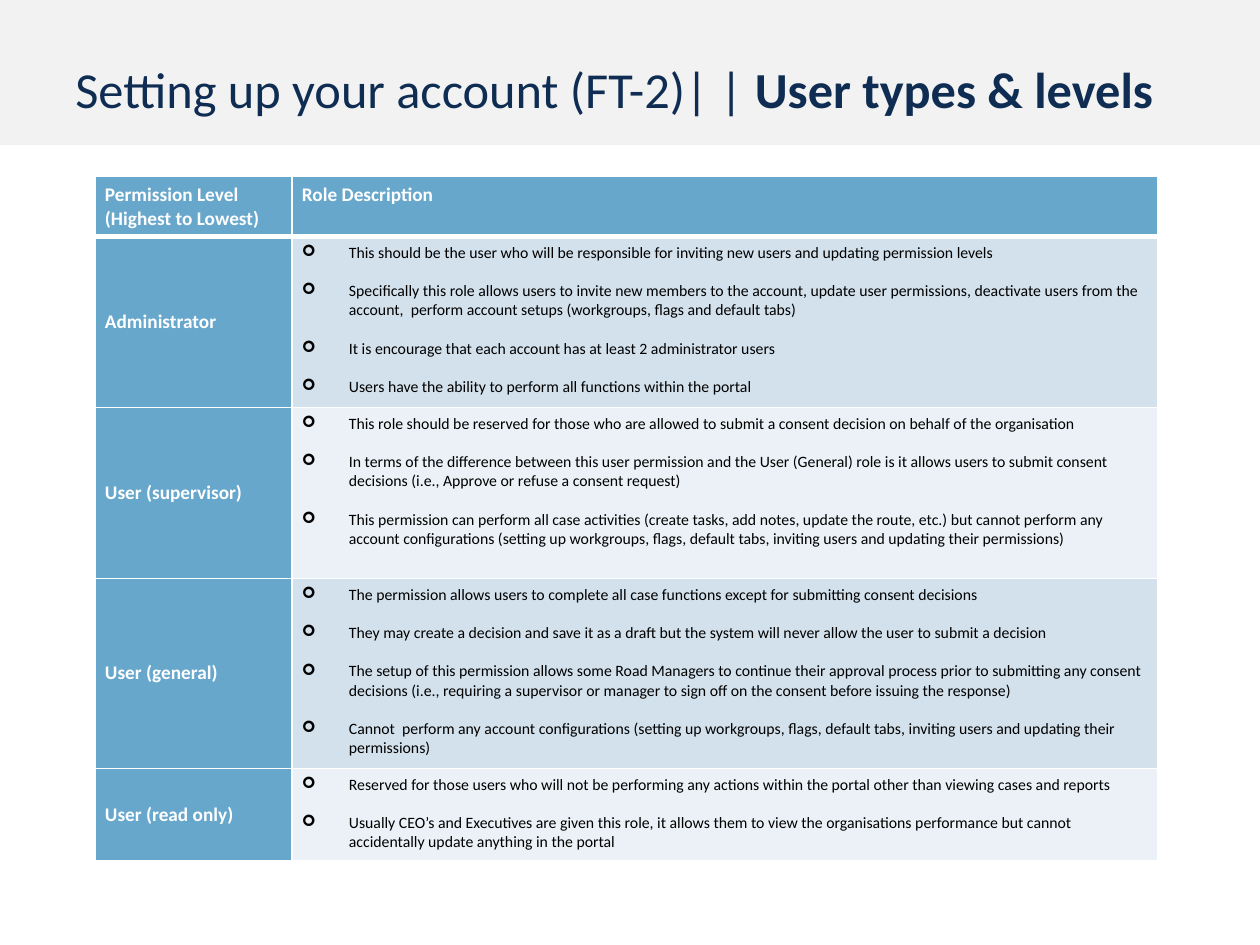
from lxml import etree
from pptx import Presentation
from pptx.dml.color import RGBColor
from pptx.enum.shapes import MSO_SHAPE
from pptx.enum.text import MSO_ANCHOR
from pptx.oxml import parse_xml
from pptx.oxml.ns import nsdecls, qn
from pptx.util import Pt

RECT = MSO_SHAPE.RECTANGLE
TOP, MIDDLE = MSO_ANCHOR.TOP, MSO_ANCHOR.MIDDLE
PX = 914400 / 126
NAVY, BLUE, WHITE, BLACK = "0F2D52", "67A7CC", "FFFFFF", "000000"
BANDS = ["D3E1EC", "EBF1F6"]


def px(n):
    return round(n * PX)


def write(para, text, size=9, color=BLACK, bold=False, bullet=None, before=0):
    if bullet:
        props = para._p.get_or_add_pPr()
        props.set("marL", str(px(47)))
        props.set("indent", str(px(-47)))
        etree.SubElement(props, qn("a:buFont"), typeface="Wingdings")
        etree.SubElement(props, qn("a:buChar"), char=bullet)
    para.space_before = Pt(before)
    run = para.add_run()
    run.text = text
    run.font.name = "Calibri"
    run.font.size = Pt(size)
    run.font.bold = bold
    run.font.color.rgb = RGBColor.from_string(color)


HEADS = [["Permission Level", "(Highest to Lowest)"], ["Role Description"]]
ROLES = [
    ("Administrator", [
        "This should be the user who will be responsible for inviting new users and updating permission levels",
        "Specifically this role allows users to invite new members to the account, update user permissions, "
        "deactivate users from the account,  perform account setups (workgroups, flags and default tabs)",
        "It is encourage that each account has at least 2 administrator users",
        "Users have the ability to perform all functions within the portal",
    ]),
    ("User (supervisor)", [
        "This role should be reserved for those who are allowed to submit a consent decision on behalf of the "
        "organisation",
        "In terms of the difference between this user permission and the User (General) role is it allows users to "
        "submit consent decisions (i.e., Approve or refuse a consent request)",
        "This permission can perform all case activities (create tasks, add notes, update the route, etc.) but "
        "cannot perform any account configurations (setting up workgroups, flags, default tabs, inviting users "
        "and updating their permissions)",
    ]),
    ("User (general)", [
        "The permission allows users to complete all case functions except for submitting consent decisions",
        "They may create a decision and save it as a draft but the system will never allow the user to submit "
        "a decision",
        "The setup of this permission allows some Road Managers to continue their approval process prior to "
        "submitting any consent decisions (i.e., requiring a supervisor or manager to sign off on the consent "
        "before issuing the response)",
        "Cannot  perform any account configurations (setting up workgroups, flags, default tabs, inviting users "
        "and updating their permissions)",
    ]),
    ("User (read only)", [
        "Reserved for those users who will not be performing any actions within the portal other than viewing "
        "cases and reports",
        "Usually CEO’s and Executives are given this role, it allows them to view the organisations performance "
        "but cannot accidentally update anything in the portal",
    ]),
]
WIDTHS = [197, 866]
HEIGHTS = [60, 171, 171, 190, 93]

prs = Presentation()
prs.slide_width, prs.slide_height = px(1260), px(945)
slide = prs.slides.add_slide(prs.slide_layouts[6])

band = slide.shapes.add_shape(RECT, 0, 0, px(1260), px(145))
band.shadow.inherit = False
band.fill.solid()
band.fill.fore_color.rgb = RGBColor.from_string("F2F2F2")
band.line.fill.background()

title = slide.shapes.add_textbox(px(63), px(52), px(1134), px(107)).text_frame
title.word_wrap = True
write(title.paragraphs[0], "Setting up your account (FT-2)| | ", size=28.8, color=NAVY)
write(title.paragraphs[0], "User types & levels", size=28.8, color=NAVY, bold=True)

table = slide.shapes.add_table(
    len(HEIGHTS), len(WIDTHS), px(95), px(176), px(sum(WIDTHS)), px(sum(HEIGHTS))
).table
for col, width in zip(table.columns, WIDTHS):
    col.width = px(width)
for row, height in zip(table.rows, HEIGHTS):
    row.height = px(height)

rows = [HEADS] + [[[name], notes] for name, notes in ROLES]
for r, row in enumerate(rows):
    for c, lines in enumerate(row):
        cell = table.cell(r, c)
        cell.margin_left = cell.margin_right = px(10)
        cell.margin_top = cell.margin_bottom = px(7)
        cell.vertical_anchor = MIDDLE if r and not c else TOP
        for side in "LRTB":
            thick = (r, side) in [(0, "B"), (1, "T")]
            cell._tc.get_or_add_tcPr().append(parse_xml(
                f'<a:ln{side} {nsdecls("a")} w="{Pt(3 if thick else 1)}"><a:solidFill>'
                f'<a:srgbClr val="{WHITE}"/></a:solidFill></a:ln{side}>'))
        note = r > 0 and c > 0
        cell.fill.solid()
        cell.fill.fore_color.rgb = RGBColor.from_string(BANDS[(r - 1) % 2] if note else BLUE)
        frame = cell.text_frame
        for i, line in enumerate(lines):
            para = frame.add_paragraph() if i else frame.paragraphs[0]
            if note:
                write(para, line, bullet="➢", before=11 if i else 0)
            else:
                write(para, line, size=11, color=WHITE, bold=True)

prs.save("out.pptx")
